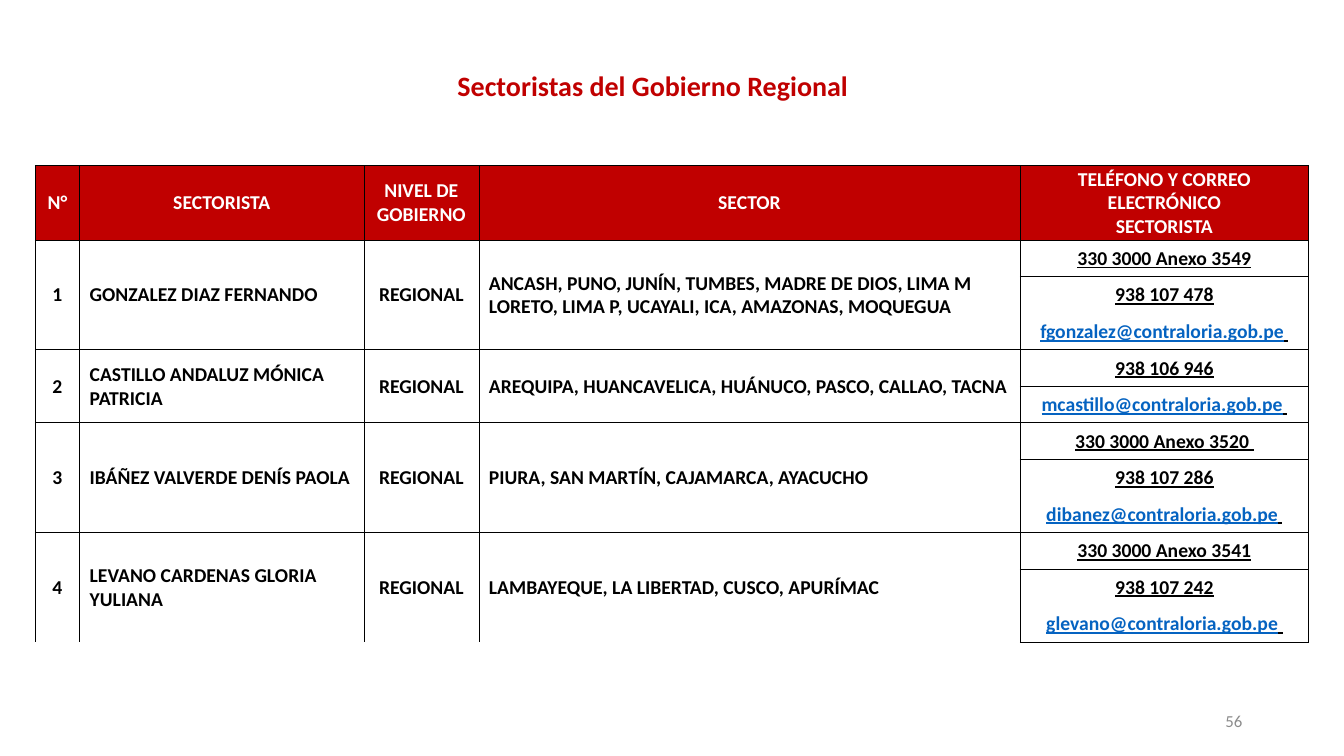
from copy import deepcopy

from lxml import etree
from pptx import Presentation
from pptx.dml.color import RGBColor as RGB
from pptx.enum.text import MSO_ANCHOR as ANCHOR, PP_ALIGN as ALIGN
from pptx.oxml.ns import qn
from pptx.util import Inches, Pt

COLORS = {"red": "C00000", "white": "FFFFFF", "black": "000000",
          "link": "0563C1", "gray": "8C8C8C"}
W, H = 13.33, 7.5
NO_STYLE = "{2D5ABB26-0587-4C30-8999-92F81FD0307C}"
HEADERS = ["N°", "SECTORISTA", "NIVEL DE\nGOBIERNO", "SECTOR",
           "TELÉFONO Y CORREO ELECTRÓNICO\nSECTORISTA"]
SECTORISTAS = [
    ("GONZALEZ DIAZ FERNANDO",
     "ANCASH, PUNO, JUNÍN, TUMBES, MADRE DE DIOS, LIMA M\n"
     "LORETO, LIMA P, UCAYALI, ICA, AMAZONAS, MOQUEGUA",
     ["330 3000 Anexo 3549", "938 107 478", "fgonzalez@contraloria.gob.pe"]),
    ("CASTILLO ANDALUZ MÓNICA PATRICIA",
     "AREQUIPA, HUANCAVELICA, HUÁNUCO, PASCO, CALLAO, TACNA",
     ["938 106 946", "mcastillo@contraloria.gob.pe"]),
    ("IBÁÑEZ VALVERDE DENÍS PAOLA",
     "PIURA, SAN MARTÍN, CAJAMARCA, AYACUCHO",
     ["330 3000 Anexo 3520 ", "938 107 286", "dibanez@contraloria.gob.pe"]),
    ("LEVANO CARDENAS GLORIA YULIANA",
     "LAMBAYEQUE, LA LIBERTAD, CUSCO, APURÍMAC",
     ["330 3000 Anexo 3541", "938 107 242", "glevano@contraloria.gob.pe"]),
]
COL_WIDTHS = [0.44, 2.82, 1.14, 5.37, 2.86]
LEFT_COLS = (1, 3)
TABLE_H, HEADER_H = 4.73, 0.74
n_rows = sum(len(contacts) for _, _, contacts in SECTORISTAS)
row_h = (TABLE_H - HEADER_H) / n_rows


def write(p, text, color, align=ALIGN.CENTER, size=14, bold=True, underline=False):
    """Add text to a paragraph; line breaks take the format of the run before."""
    p.alignment = align
    for i, line in enumerate(text.split("\n")):
        if i:
            p.add_line_break()
            p._p.findall(qn("a:br"))[-1].append(deepcopy(r._r.rPr))
        r = p.add_run()
        r.text = line
        fmt = {"name": "Calibri", "size": Pt(size), "bold": bold, "underline": underline}
        for key, value in fmt.items():
            setattr(r.font, key, value)
        r.font.color.rgb = RGB.from_string(COLORS[color])


def format_cell(cell, sides, fill=None, left=0.01):
    """Set margins, anchor, thin black borders on the given sides, and fill."""
    fmt = {"margin_left": Inches(left), "margin_right": Inches(0.01),
           "margin_top": Inches(0.01), "margin_bottom": 0,
           "vertical_anchor": ANCHOR.MIDDLE}
    for key, value in fmt.items():
        setattr(cell, key, value)
    tcPr = cell._tc.get_or_add_tcPr()
    for side in sides:
        ln = etree.SubElement(tcPr, qn(f"a:ln{side}"), w=str(Pt(0.5)))
        solid = etree.SubElement(ln, qn("a:solidFill"))
        etree.SubElement(solid, qn("a:srgbClr"), val=COLORS["black"])
    if fill:
        cell.fill.solid()
        cell.fill.fore_color.rgb = RGB.from_string(COLORS[fill])
    else:
        cell.fill.background()


prs = Presentation()
prs.slide_width, prs.slide_height = Inches(W), Inches(H)
s = prs.slides.add_slide(prs.slide_layouts[6])

# Title and page number
labels = [
    ((2.26, 0.63, 8.43, 0.44), "Sectoristas del Gobierno Regional", ANCHOR.TOP,
     {"color": "red", "size": 20}),
    ((9.42, 6.95, 3, 0.4), "56", ANCHOR.MIDDLE,
     {"color": "gray", "size": 12, "bold": False, "align": ALIGN.RIGHT}),
]
for box, text, anchor, fmt in labels:
    tf = s.shapes.add_textbox(*map(Inches, box)).text_frame
    tf.word_wrap = True
    tf.vertical_anchor = anchor
    write(tf.paragraphs[0], text, **fmt)

# Table
frame = s.shapes.add_table(n_rows + 1, len(COL_WIDTHS), Inches(0.35), Inches(1.64),
                           Inches(sum(COL_WIDTHS)), Inches(TABLE_H))
table = frame.table
table.first_row = table.horz_banding = False
table._tbl.tblPr.find(qn("a:tableStyleId")).text = NO_STYLE
for col, width in zip(table.columns, COL_WIDTHS):
    col.width = Inches(width)
for i, row in enumerate(table.rows):
    row.height = Inches(row_h if i else HEADER_H)

for c, header in enumerate(HEADERS):
    cell = table.cell(0, c)
    format_cell(cell, "LRTB", fill="red")
    write(cell.text_frame.paragraphs[0], header, "white")

# One block of rows per person: four merged columns, one contact per row
top = 1
contact_col = len(COL_WIDTHS) - 1
for number, (name, sector, contacts) in enumerate(SECTORISTAS, 1):
    last = top + len(contacts) - 1
    for r in range(top, last + 1):
        sides = "LR" + "T" * (r == top) + "B" * (r == last)
        for c in range(len(COL_WIDTHS)):
            format_cell(table.cell(r, c), sides, left=0.1 if c in LEFT_COLS else 0.01)
    for c, text in enumerate([str(number), name, "REGIONAL", sector]):
        cell = table.cell(top, c)
        cell.merge(table.cell(last, c))
        write(cell.text_frame.paragraphs[0], text, "black",
              align=ALIGN.LEFT if c in LEFT_COLS else ALIGN.CENTER)
    for r, contact in enumerate(contacts, top):
        p = table.cell(r, contact_col).text_frame.paragraphs[0]
        is_mail = "@" in contact
        write(p, contact, "link" if is_mail else "black", underline=True)
        if is_mail:
            write(p, " ", "black", underline=True)
    top = last + 1

prs.save("out.pptx")
